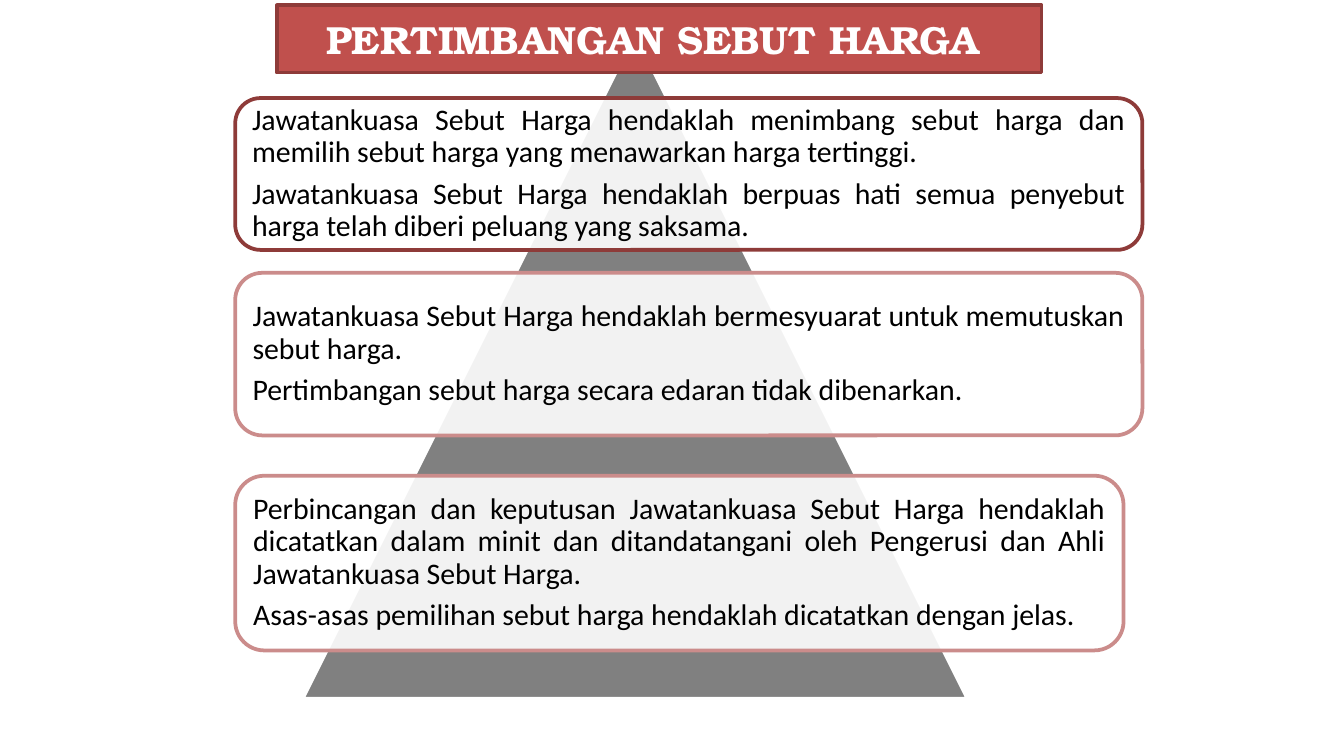
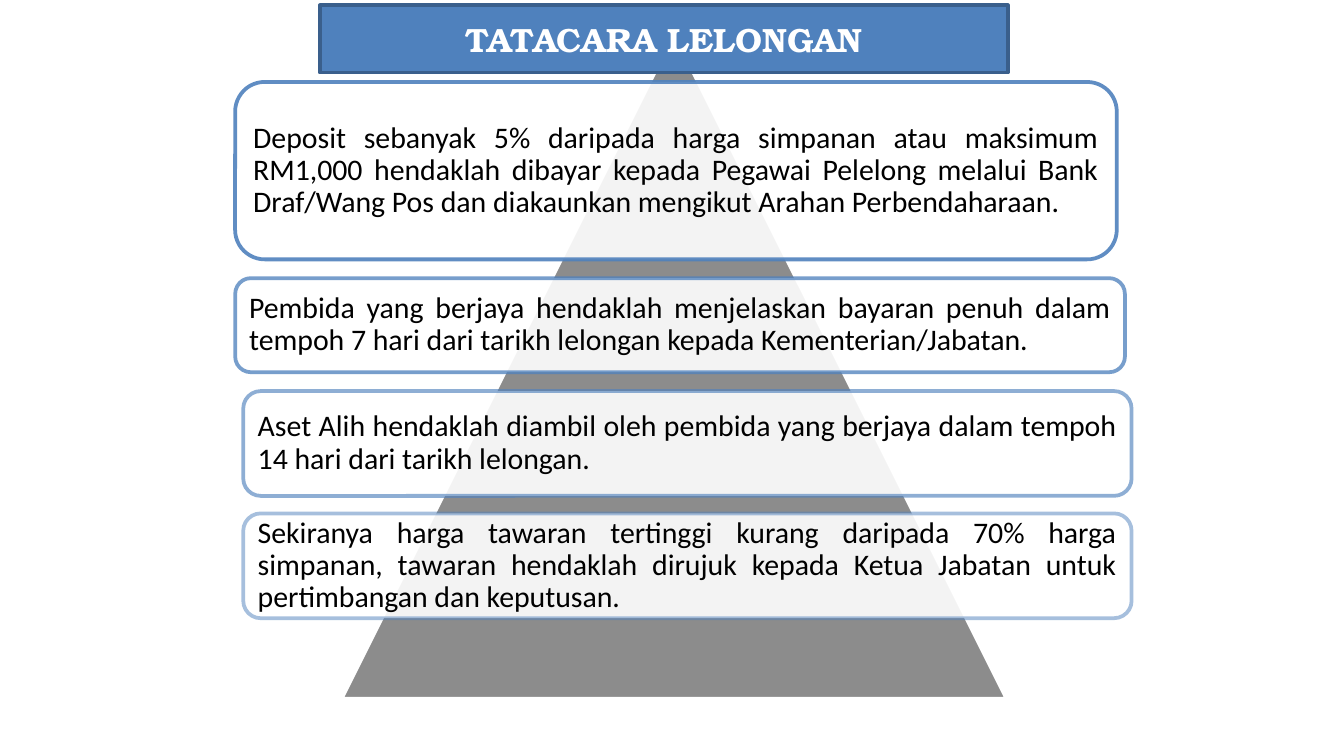
from dataclasses import dataclass

from pptx import Presentation
from pptx.dml.color import RGBColor
from pptx.enum.shapes import MSO_SHAPE
from pptx.enum.text import MSO_ANCHOR, PP_ALIGN
from pptx.oxml.xmlchemy import OxmlElement
from pptx.util import Inches, Pt


@dataclass(frozen=True)
class Theme:
    """Colours, fonts and sizes shared by the slides."""
    white: str = "FFFFFF"
    black: str = "000000"
    grey: str = "808080"
    red: str = "C0504D"
    maroon: str = "8E3B39"
    rose: str = "CB8C8B"
    blue: str = "4F81BD"
    navy: str = "3A5F8C"
    head: str = "TeX Gyre Bonum"
    body: str = "Calibri"
    size: int = 16
    gap: int = 5
    edge: int = 2
    pad: float = 0.07
    peak: float = 4.95
    clear: int = 90


THEME = Theme()


def fade(shape, query, alpha):
    """Set the opacity, in percent, of the colour found by the query."""
    if alpha < 100:
        node = OxmlElement("a:alpha")
        node.set("val", str(alpha * 1000))
        shape.element.spPr.xpath(query)[0].append(node)


def draw(slide, kind, box, fill, line, solid=100, stroke=100):
    """Add a flat preset shape with a fill and an outline."""
    shape = slide.shapes.add_shape(kind, *map(Inches, box))
    shape.shadow.inherit = False
    shape.fill.solid()
    shape.fill.fore_color.rgb = RGBColor.from_string(fill)
    shape.line.color.rgb = RGBColor.from_string(line)
    shape.line.width = Pt(THEME.edge)
    fade(shape, "a:solidFill/a:srgbClr", solid)
    fade(shape, "a:ln/a:solidFill/a:srgbClr", stroke)
    return shape


def write(para, text, face, size, color, bold=False):
    """Add one styled run to a paragraph."""
    run = para.add_run()
    run.text = text
    font = run.font
    font.name, font.size, font.bold = face, Pt(size), bold
    font.color.rgb = RGBColor.from_string(color)


def banner(slide, box, text, size, fill, line):
    """Draw the title band."""
    frame = draw(slide, MSO_SHAPE.RECTANGLE, box, fill, line).text_frame
    frame.word_wrap = True
    frame.vertical_anchor = MSO_ANCHOR.MIDDLE
    para = frame.paragraphs[0]
    para.alignment = PP_ALIGN.CENTER
    write(para, text, THEME.head, size, THEME.white, True)


def card(slide, box, texts, line, stroke):
    """Draw a rounded card with justified paragraphs."""
    shape = draw(slide, MSO_SHAPE.ROUNDED_RECTANGLE, box, THEME.white, line,
                 THEME.clear, stroke)
    frame = shape.text_frame
    frame.word_wrap = True
    frame.vertical_anchor = MSO_ANCHOR.MIDDLE
    frame.margin_left = frame.margin_right = Inches(THEME.pad)
    frame.margin_top = frame.margin_bottom = Inches(THEME.pad)
    for i, text in enumerate(texts):
        para = frame.add_paragraph() if i else frame.paragraphs[0]
        para.alignment = PP_ALIGN.JUSTIFY
        para.line_spacing = 0.9
        para.space_after = Pt(THEME.gap)
        write(para, text, THEME.body, THEME.size, THEME.black)


def stack(deck, left, solid, cards, title):
    """Build a slide with a pyramid, its cards and the title band."""
    slide = deck.slides.add_slide(deck.slide_layouts[6])
    box = (left, 0.25, THEME.peak, THEME.peak)
    draw(slide, MSO_SHAPE.ISOSCELES_TRIANGLE, box, THEME.grey, THEME.white, solid)
    for item in cards:
        card(slide, *item)
    banner(slide, *title)


QUOTES = [
    ((1.75, 0.73, 6.75, 1.13),
     ["Jawatankuasa Sebut Harga hendaklah menimbang sebut harga dan memilih "
      "sebut harga yang menawarkan harga tertinggi.",
      "Jawatankuasa Sebut Harga hendaklah berpuas hati semua penyebut harga "
      "telah diberi peluang yang saksama."], THEME.maroon, 100),
    ((1.75, 2.03, 6.75, 1.21),
     ["Jawatankuasa Sebut Harga hendaklah bermesyuarat untuk memutuskan "
      "sebut harga.",
      "Pertimbangan sebut harga secara edaran tidak dibenarkan."],
     THEME.rose, 100),
    ((1.75, 3.54, 6.61, 1.3),
     ["Perbincangan dan keputusan Jawatankuasa Sebut Harga hendaklah "
      "dicatatkan dalam minit dan ditandatangani oleh Pengerusi dan Ahli "
      "Jawatankuasa Sebut Harga.",
      "Asas-asas pemilihan sebut harga hendaklah dicatatkan dengan jelas."],
     THEME.rose, 100),
]

SALES = [
    ((1.75, 0.61, 6.56, 1.32),
     ["Deposit sebanyak 5% daripada harga simpanan atau maksimum RM1,000 "
      "hendaklah dibayar kepada Pegawai Pelelong melalui Bank Draf/Wang Pos "
      "dan diakaunkan mengikut Arahan Perbendaharaan."], THEME.blue, 90),
    ((1.75, 2.07, 6.62, 0.7),
     ["Pembida yang berjaya hendaklah menjelaskan bayaran penuh dalam tempoh "
      "7 hari dari tarikh lelongan kepada Kementerian/Jabatan."],
     THEME.blue, 77),
    ((1.81, 2.91, 6.61, 0.78),
     ["Aset Alih hendaklah diambil oleh pembida yang berjaya dalam tempoh "
      "14 hari dari tarikh lelongan."], THEME.blue, 63),
    ((1.81, 3.82, 6.61, 0.78),
     ["Sekiranya harga tawaran tertinggi kurang daripada 70% harga simpanan, "
      "tawaran hendaklah dirujuk kepada Ketua Jabatan untuk pertimbangan dan "
      "keputusan."], THEME.blue, 50),
]


def main():
    """Build and save the deck."""
    deck = Presentation()
    deck.slide_width = Inches(10)
    deck.slide_height = deck.slide_width * 9 // 16
    stack(deck, 2.25, 100, QUOTES,
          ((2.06, 0.04, 5.69, 0.5), "PERTIMBANGAN SEBUT HARGA ", 21,
           THEME.red, THEME.maroon))
    stack(deck, 2.54, THEME.clear, SALES,
          ((2.38, 0.04, 5.12, 0.5), "TATACARA LELONGAN", 18,
           THEME.blue, THEME.navy))
    deck.save("out.pptx")


if __name__ == "__main__":
    main()
